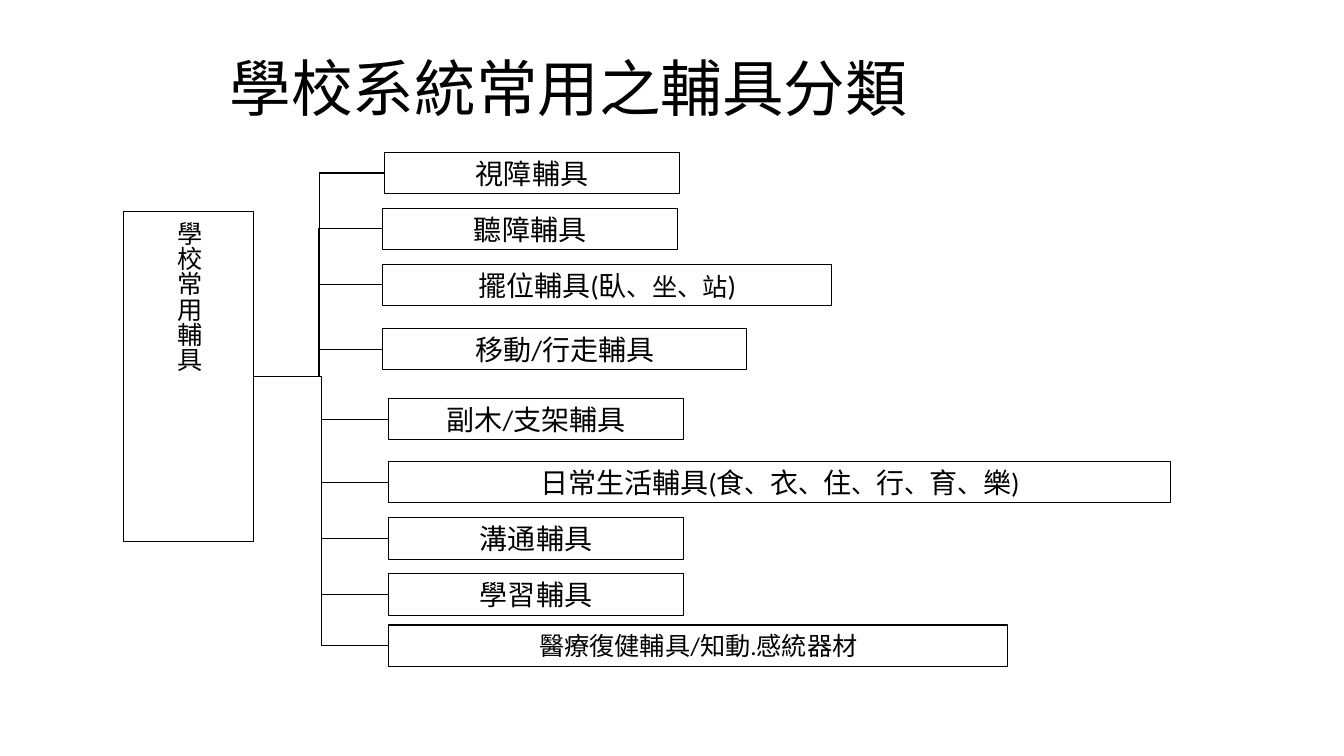
"""Build a one-slide tree of assistive device categories used in schools."""
from dataclasses import dataclass
from itertools import groupby

from lxml.etree import SubElement
from pptx import Presentation
from pptx.dml.color import RGBColor
from pptx.enum.shapes import MSO_CONNECTOR as Link, MSO_SHAPE as Preset
from pptx.enum.text import MSO_ANCHOR as Anchor, PP_ALIGN as Align
from pptx.oxml.ns import qn
from pptx.util import Cm, Pt

COLORS = {"ink": "000000"}
INK = RGBColor.from_string(COLORS["ink"])
BODY_FONT = "Calibri"
TITLE_FONT = "Noto Sans CJK SC"
LINE_WIDTH = Pt(0.75)
BOX_HEIGHT = 1.04
LEFT_UPPER, LEFT_LOWER = 9.65, 9.8
SHORT_WIDTH = 7.42
SMALL_SIZE = 18


@dataclass(frozen=True)
class Box:
    label: str
    left: float
    top: float
    width: float = SHORT_WIDTH
    height: float = BOX_HEIGHT
    size: int = 20
    small_chars: str = ""


ROOT = Box("學校常用輔具", 3.12, 5.33, 3.28, 8.31, size=18)
CATEGORIES = [
    Box("視障輔具", 9.7, 3.84),
    Box("聽障輔具", LEFT_UPPER, 5.25),
    Box("擺位輔具(臥、坐、站)", LEFT_UPPER, 6.66, 11.3, small_chars="、坐站"),
    Box("移動/行走輔具", LEFT_UPPER, 8.28, 9.17),
    Box("副木/支架輔具", LEFT_LOWER, 10.04),
    Box("日常生活輔具(食、衣、住、行、育、樂)", LEFT_LOWER, 11.63, 19.71, small_chars="、"),
    Box("溝通輔具", LEFT_LOWER, 13.05),
    Box("學習輔具", LEFT_LOWER, 14.46),
    Box("醫療復健輔具/知動.感統器材", LEFT_LOWER, 15.75, 15.6, size=18),
]


def style_run(run, font_name: str, size: int) -> None:
    """Give a run its font, size and colour."""
    run.font.name = font_name
    run.font.size = Pt(size)
    run.font.color.rgb = INK


def draw_title(slide, title: str) -> None:
    """Write the slide title."""
    heading = slide.shapes.add_textbox(Cm(5.54), Cm(0.71), Cm(22.86), Cm(3.18))
    frame = heading.text_frame
    frame.word_wrap = True
    frame.vertical_anchor = Anchor.MIDDLE
    frame.text = title
    paragraph = frame.paragraphs[0]
    paragraph.line_spacing = 0.9
    run = paragraph.runs[0]
    style_run(run, TITLE_FONT, 44)
    SubElement(run.font._element, qn("a:ea"), typeface=TITLE_FONT)


def draw_box(slide, box: Box):
    """Draw an outlined box with its centred label."""
    shape = slide.shapes.add_shape(
        Preset.FLOWCHART_PROCESS, Cm(box.left), Cm(box.top), Cm(box.width), Cm(box.height)
    )
    shape.shadow.inherit = False
    shape.fill.background()
    shape.line.color.rgb = INK
    shape.line.width = LINE_WIDTH
    frame = shape.text_frame
    frame.word_wrap = False
    frame.vertical_anchor = Anchor.MIDDLE
    paragraph = frame.paragraphs[0]
    paragraph.alignment = Align.CENTER
    for is_small, chars in groupby(box.label, lambda char: char in box.small_chars):
        run = paragraph.add_run()
        run.text = "".join(chars)
        style_run(run, BODY_FONT, SMALL_SIZE if is_small else box.size)
    return shape


def draw_branch(slide, parent, child) -> None:
    """Join the parent's right side to the child's left side."""
    branch = slide.shapes.add_connector(
        Link.ELBOW,
        parent.left + parent.width,
        parent.top + parent.height // 2,
        child.left,
        child.top + child.height // 2,
    )
    branch.begin_connect(parent, 3)
    branch.end_connect(child, 1)
    branch.line.color.rgb = INK
    branch.line.width = LINE_WIDTH
    SubElement(branch._element.spPr, qn("a:effectLst"))


def main() -> None:
    """Assemble and save the slide."""
    deck = Presentation()
    deck.slide_width, deck.slide_height = Cm(33.87), Cm(19.05)
    slide = deck.slides.add_slide(deck.slide_layouts[6])
    draw_title(slide, "學校系統常用之輔具分類")
    root = draw_box(slide, ROOT)
    root.text_frame._txBody.bodyPr.set("vert", "eaVert")
    categories = [draw_box(slide, box) for box in CATEGORIES]
    for category in categories:
        draw_branch(slide, root, category)
    deck.save("out.pptx")


if __name__ == "__main__":
    main()
